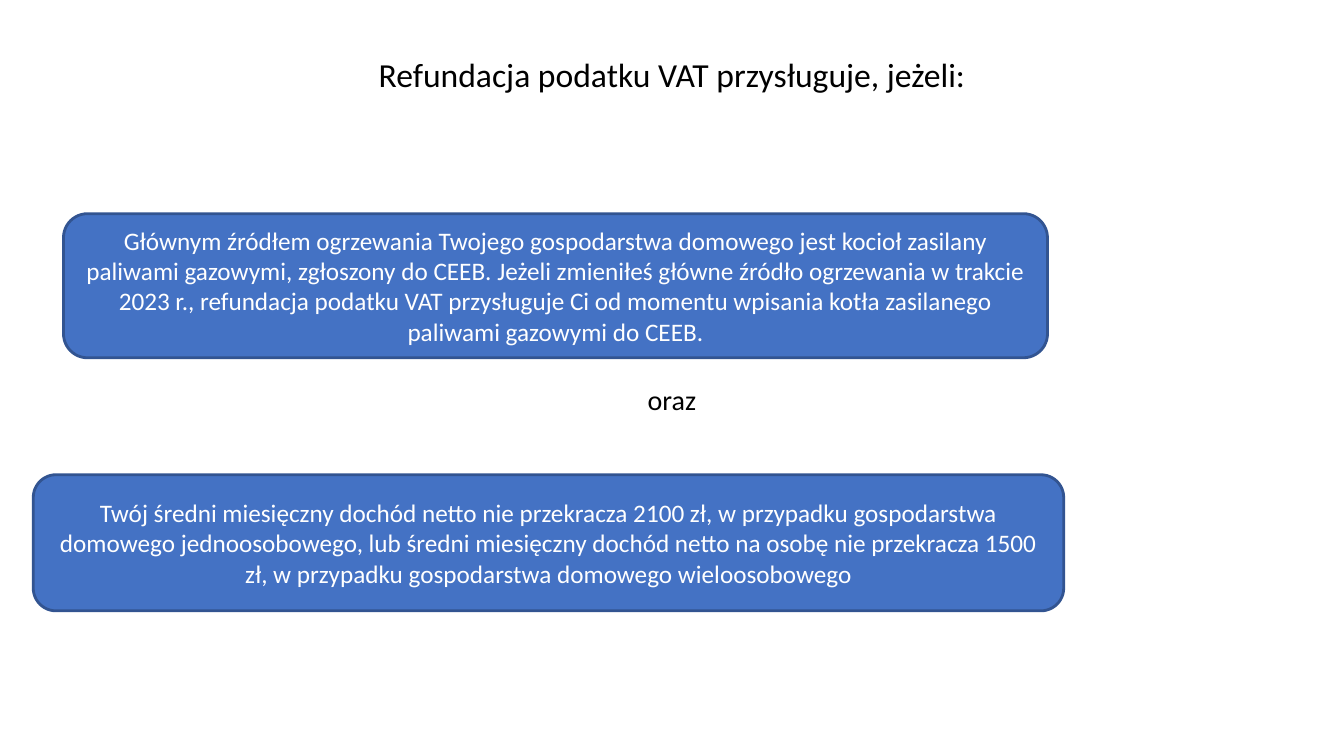
import pptx
import pptx.util
import pptx.dml.color
import pptx.enum.shapes
import pptx.enum.text
from pptx.util import Inches


def color(hex_code):
    return pptx.dml.color.RGBColor.from_string(hex_code)


def write(target, text, size, ink="000000", anchor="TOP", grow=False):
    frame = target.text_frame
    frame.word_wrap = True
    frame.vertical_anchor = pptx.enum.text.MSO_ANCHOR[anchor]
    if grow:
        frame.auto_size = pptx.enum.text.MSO_AUTO_SIZE.SHAPE_TO_FIT_TEXT
    paragraph = frame.paragraphs[0]
    paragraph.alignment = pptx.enum.text.PP_ALIGN.CENTER
    run = paragraph.add_run()
    run.text = text
    run.font.name = "Calibri"
    run.font.size = pptx.util.Pt(size)
    run.font.color.rgb = color(ink)


deck = pptx.Presentation()
deck.slide_width = Inches(13.33)
deck.slide_height = Inches(7.5)
slide = deck.slides.add_slide(deck.slide_layouts[6])

# Heading and the word joining the two conditions
labels = [
    ("Refundacja podatku VAT przysługuje, jeżeli:", 0.49, 0.5, 24),
    ("oraz", 3.75, 0.43, 20),
]
for text, top, height, size in labels:
    label = slide.shapes.add_textbox(Inches(3.33), Inches(top), Inches(6.67), Inches(height))
    write(label, text, size, grow=True)

# Conditions for the refund
conditions = [
    ("Głównym źródłem ogrzewania Twojego gospodarstwa domowego jest kocioł zasilany "
     "paliwami gazowymi, zgłoszony do CEEB. Jeżeli zmieniłeś główne źródło ogrzewania "
     "w trakcie 2023 r., refundacja podatku VAT przysługuje Ci od momentu wpisania "
     "kotła zasilanego paliwami gazowymi do CEEB.",
     (0.63, 2.12, 9.76, 1.43)),
    ("Twój średni miesięczny dochód netto nie przekracza 2100 zł, w przypadku "
     "gospodarstwa domowego jednoosobowego, lub średni miesięczny dochód netto na "
     "osobę nie przekracza 1500 zł, w przypadku gospodarstwa domowego wieloosobowego",
     (0.33, 4.71, 10.22, 1.35)),
]
for text, place in conditions:
    condition = slide.shapes.add_shape(
        pptx.enum.shapes.MSO_SHAPE.ROUNDED_RECTANGLE, *map(Inches, place))
    condition.shadow.inherit = False
    condition.fill.solid()
    condition.fill.fore_color.rgb = color("4472C4")
    condition.line.color.rgb = color("325491")
    condition.line.width = pptx.util.Pt(2)
    write(condition, text, 18, ink="FFFFFF", anchor="MIDDLE")

deck.save("out.pptx")
